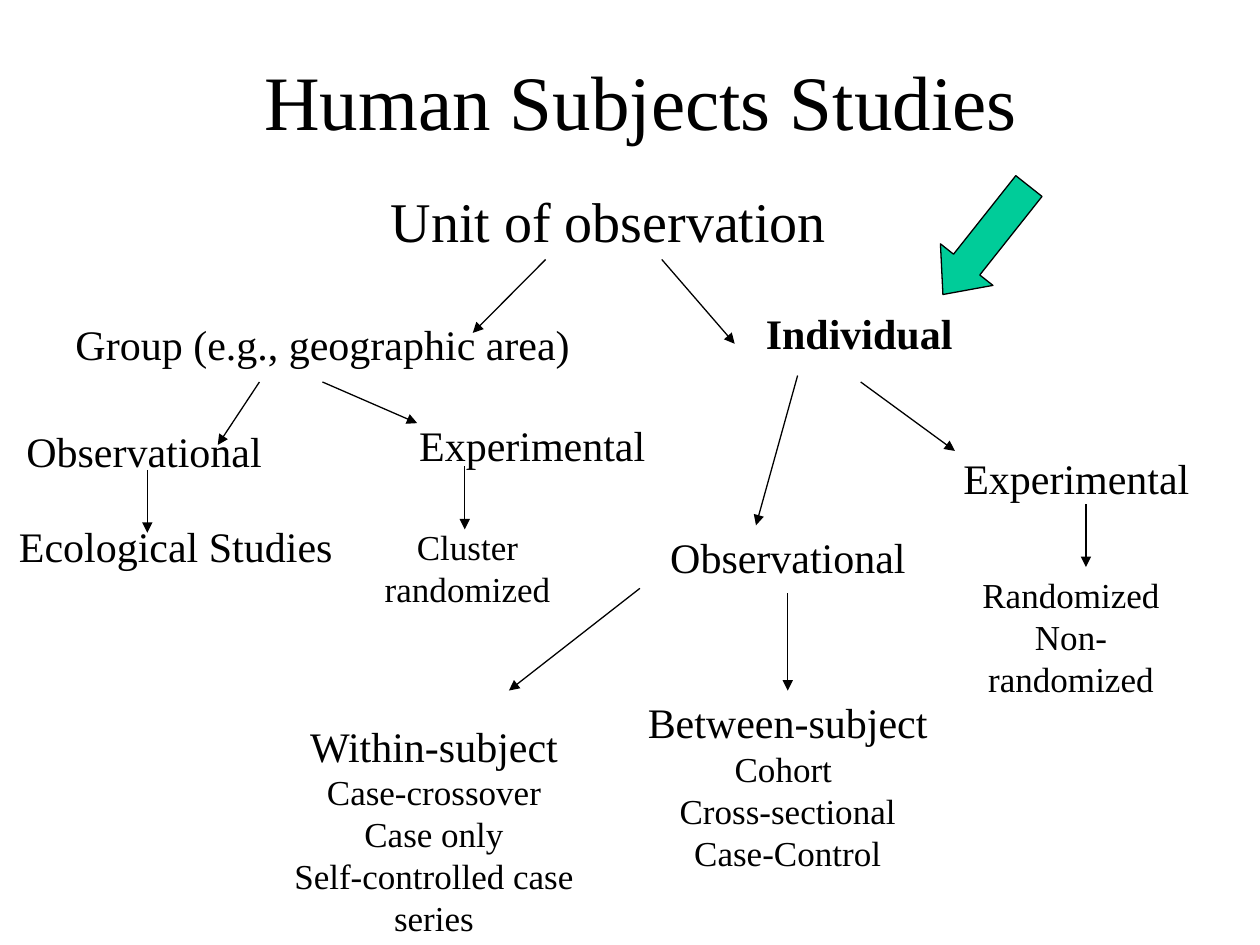
import pptx
import pptx.dml.color
import pptx.enum.shapes
import pptx.enum.text
import pptx.oxml.ns
import pptx.util
import lxml.etree

Cm = pptx.util.Cm
Pt = pptx.util.Pt
COLORS = {"ink": "000000", "arrow": "00CC99", "paper": "FFFFFF"}


def rgb(name):
    return pptx.dml.color.RGBColor.from_string(COLORS[name])


def write_text(paragraph, text, size=24, bold=False, font="Times New Roman", color="ink"):
    paragraph.text = text
    paragraph.alignment = pptx.enum.text.PP_ALIGN.CENTER
    paragraph.font.name = font
    paragraph.font.size = Pt(size)
    paragraph.font.bold = bold
    paragraph.font.color.rgb = rgb(color)


class DiagramSlide:
    line_width = Pt(0.75)
    detail_size = 20

    def __init__(self, presentation):
        self.slide = presentation.slides.add_slide(presentation.slide_layouts[5])
        self.slide.background.fill.solid()
        self.slide.background.fill.fore_color.rgb = rgb("paper")

    def title(self, text, left, top, width, height):
        title = self.slide.shapes.title
        title.left, title.top, title.width, title.height = map(Cm, (left, top, width, height))
        title.text_frame.vertical_anchor = pptx.enum.text.MSO_ANCHOR.MIDDLE
        write_text(title.text_frame.paragraphs[0], text, size=44)

    def label(self, text, left, top, width, height=1.27, details=(), wrap=False, **text_format):
        shape = self.slide.shapes.add_textbox(*map(Cm, (left, top, width, height)))
        frame = shape.text_frame
        frame.word_wrap = wrap
        frame.auto_size = pptx.enum.text.MSO_AUTO_SIZE.SHAPE_TO_FIT_TEXT
        write_text(frame.paragraphs[0], text, **text_format)
        for detail in details:
            write_text(frame.add_paragraph(), detail, size=self.detail_size)
        return shape

    def arrow(self, start_x, start_y, end_x, end_y, target=None):
        connector = self.slide.shapes.add_connector(
            pptx.enum.shapes.MSO_CONNECTOR.STRAIGHT, *map(Cm, (start_x, start_y, end_x, end_y))
        )
        if target is not None:
            connector.end_connect(target, 0)
        connector.line.color.rgb = rgb("ink")
        connector.line.width = self.line_width
        line = connector.line._get_or_add_ln()
        lxml.etree.SubElement(line, pptx.oxml.ns.qn("a:tailEnd"), type="triangle")
        properties = connector._element.spPr
        lxml.etree.SubElement(properties, pptx.oxml.ns.qn("a:effectLst"))

    def block_arrow(self, left, top, width, height, rotation):
        shape = self.slide.shapes.add_shape(
            pptx.enum.shapes.MSO_SHAPE.DOWN_ARROW, *map(Cm, (left, top, width, height))
        )
        shape.adjustments[0] = 0.5
        shape.adjustments[1] = 0.57
        shape.rotation = rotation
        shape.shadow.inherit = False
        shape.fill.solid()
        shape.fill.fore_color.rgb = rgb("arrow")
        shape.line.color.rgb = rgb("ink")
        shape.line.width = self.line_width


def main():
    presentation = pptx.Presentation()
    presentation.slide_width = Cm(25.4)
    presentation.slide_height = Cm(19.05)
    diagram = DiagramSlide(presentation)

    diagram.title("Human Subjects Studies", 2.12, 0.42, 21.6, 3.18)
    diagram.label("Unit of observation", 7.62, 3.63, 9.3, 1.6, size=32)

    diagram.label("Group (e.g., geographic area)", 1.22, 6.3, 10.57)
    diagram.label("Observational", 0.15, 8.46, 5.51)
    diagram.label("Experimental", 7.34, 8.33, 6.78)
    diagram.label("Ecological Studies", 0.13, 10.36, 6.83)
    diagram.label("Cluster randomized", 7.19, 10.46, 4.47, 1.96, wrap=True, size=20)

    diagram.label("Individual", 15.16, 6.07, 4.32, bold=True)
    diagram.label("Observational", 13.13, 10.59, 5.51)
    diagram.label("Experimental", 18.31, 8.99, 6.78)
    diagram.label("Randomized", 19.05, 11.43, 5.08, 1.96,
                  details=["Non-randomized"], wrap=True, size=20)
    diagram.label("Within-subject", 4.95, 14.4, 7.6, 3.81, wrap=True,
                  details=["Case-crossover", "Case only", "Self-controlled case series"])
    between = diagram.label("Between-subject", 12.78, 13.92, 6.2, 3.84,
                            details=["Cohort ", "Cross-sectional", "Case-Control"])

    arrows = [
        (11, 5.23, 9.53, 6.71),
        (13.34, 5.23, 14.81, 6.93),
        (5.23, 7.7, 4.39, 8.97),
        (6.5, 7.7, 8.41, 8.53),
        (2.97, 9.47, 2.97, 10.74),
        (9.37, 9.4, 9.37, 10.67),
        (16.08, 7.57, 15.24, 10.59),
        (17.35, 7.7, 19.25, 9.09),
        (21.89, 10.16, 21.89, 11.43),
        (12.9, 11.86, 10.26, 13.92),
    ]
    for ends in arrows:
        diagram.arrow(*ends)
    diagram.arrow(15.88, 11.96, 15.88, 13.92, target=between)

    diagram.block_arrow(19.2, 3.45, 1.35, 2.79, rotation=38.4)
    presentation.save("out.pptx")


if __name__ == "__main__":
    main()
